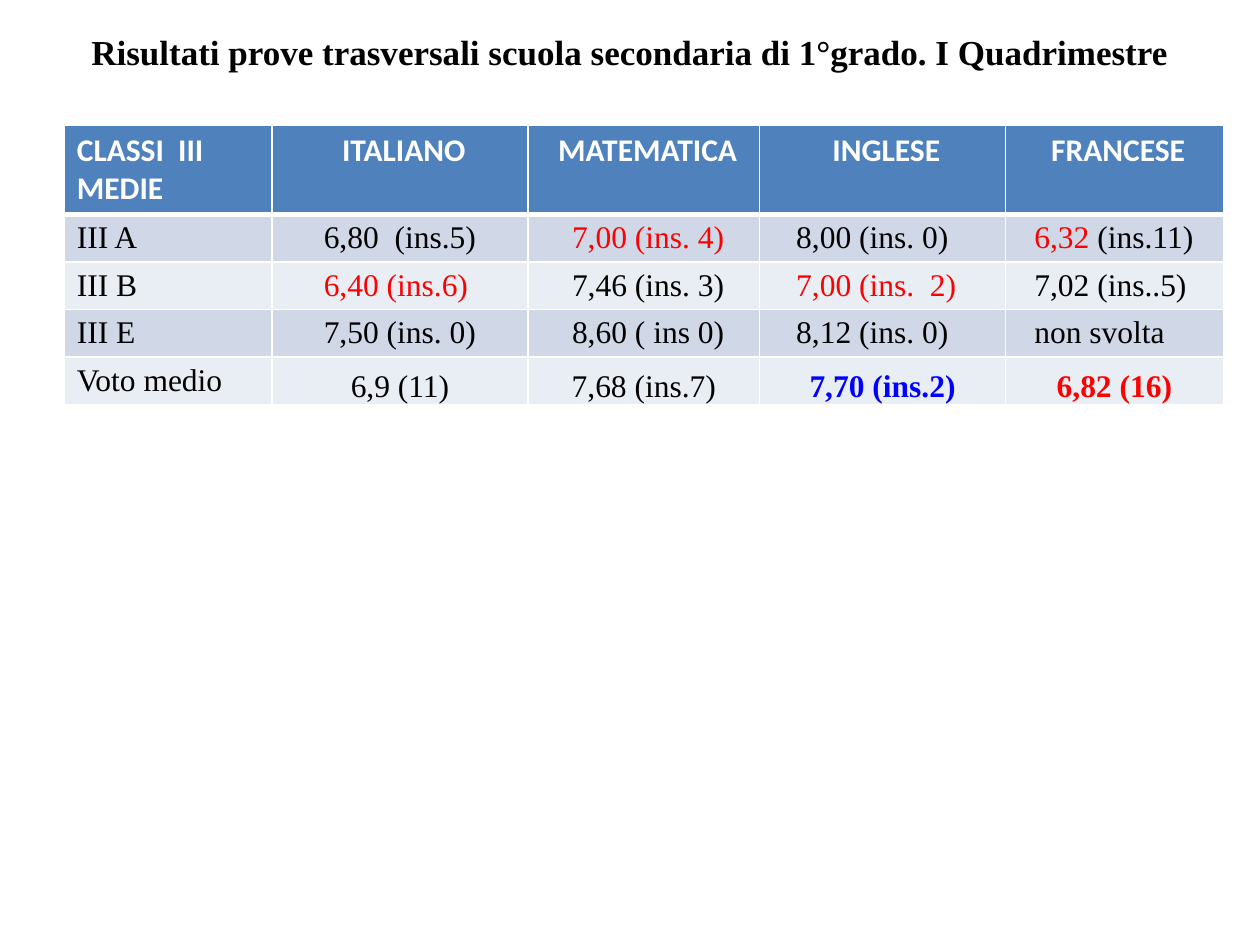
import pptx
import pptx.dml.color
import pptx.enum.text
import pptx.oxml
import pptx.oxml.ns
import pptx.util
from pptx.util import Inches, Pt

COLORS = {"white": "FFFFFF", "black": "000000", "red": "FF0000", "blue": "0000FF",
          "header": "4F81BD", "band_dark": "D0D8E8", "band_light": "E9EDF4"}
SERIF = "Times New Roman"
CENTER = pptx.enum.text.PP_ALIGN.CENTER

COLUMN_WIDTHS = [1.65, 2.03, 1.84, 1.95, 1.73]
SCORE_INDENTS = [0.1, 0.41, 0.35, 0.29, 0.23]
SUBJECTS = ["CLASSI  III MEDIE", "ITALIANO", "MATEMATICA", "INGLESE", "FRANCESE"]
# Each cell is a list of (text, colour) pieces.
CLASS_RESULTS = [
    [[("III A", "black")], [("6,80  (ins.5)", "black")], [("7,00 (ins. 4)", "red")],
     [("8,00 (ins. 0)", "black")], [("6,32 ", "red"), ("(ins.11)", "black")]],
    [[("III B", "black")], [("6,40 (ins.6)", "red")], [("7,46 (ins. 3)", "black")],
     [("7,00 (ins.  2)", "red")], [("7,02 (ins..5)", "black")]],
    [[("III E", "black")], [("7,50 (ins. 0)", "black")], [("8,60 ( ins 0)", "black")],
     [("8,12 (ins. 0)", "black")], [("non svolta", "black")]],
]
AVERAGES = [("Voto medio", "black"), ("6,9 (11)", "black"), ("7,68 (ins.7)", "black"),
            ("7,70 (ins.2)", "blue"), ("6,82 (16)", "red")]


def rgb(name):
    return pptx.dml.color.RGBColor.from_string(COLORS[name])


def format_run(run, color, font=SERIF, size=18, bold=False):
    run.font.name = font
    run.font.size = Pt(size)
    run.font.bold = bold
    run.font.color.rgb = rgb(color)


def set_borders(cell, top=1, bottom=1):
    """Draw white cell borders; widths are in points."""
    properties = cell._tc.get_or_add_tcPr()
    sides = [("L", 1), ("R", 1), ("T", top), ("B", bottom)]
    for position, (side, width) in enumerate(sides):
        properties.insert(position, pptx.oxml.parse_xml(
            f'<a:ln{side} {pptx.oxml.ns.nsdecls("a")} w="{Pt(width)}"><a:solidFill>'
            f'<a:srgbClr val="{COLORS["white"]}"/></a:solidFill></a:ln{side}>'))


def fill_cell(cell, pieces, fill, font=SERIF, bold=False, align=None):
    cell.fill.solid()
    cell.fill.fore_color.rgb = rgb(fill)
    paragraph = cell.text_frame.paragraphs[0]
    paragraph.alignment = align
    for text, color in pieces:
        run = paragraph.add_run()
        run.text = text
        format_run(run, color, font, bold=bold)


def add_title(slide):
    title = slide.shapes.title
    title.left, title.top = Inches(0.5), Inches(-0.5)
    title.width, title.height = Inches(9), Inches(1.81)
    title.text_frame.text = ("Risultati prove trasversali scuola secondaria "
                             "di 1°grado. I Quadrimestre")
    title.text_frame.vertical_anchor = pptx.enum.text.MSO_ANCHOR.MIDDLE
    paragraph = title.text_frame.paragraphs[0]
    paragraph.alignment = CENTER
    format_run(paragraph.runs[0], "black", size=20, bold=True)


def add_header(results):
    for column, subject in enumerate(SUBJECTS):
        cell = results.cell(0, column)
        fill_cell(cell, [(subject, "white")], "header", "Calibri", True,
                  CENTER if column else None)
        if column:
            cell.margin_left = Inches(0.16)
        set_borders(cell, bottom=3)


def add_class_rows(results):
    for row, scores in enumerate(CLASS_RESULTS, start=1):
        for column, pieces in enumerate(scores):
            cell = results.cell(row, column)
            fill_cell(cell, pieces, "band_dark" if row % 2 else "band_light")
            cell.margin_left = Inches(SCORE_INDENTS[column])
            set_borders(cell, top=3 if row == 1 else 1)


def add_averages(results):
    for column, (text, color) in enumerate(AVERAGES):
        cell = results.cell(len(CLASS_RESULTS) + 1, column)
        fill_cell(cell, [(text, color)], "band_light", bold=color != "black",
                  align=CENTER if column else None)
        if column:
            cell.vertical_anchor = pptx.enum.text.MSO_ANCHOR.BOTTOM
            cell.margin_left = cell.margin_right = cell.margin_top = Inches(0.01)
            cell.margin_bottom = 0
        set_borders(cell)


def add_results_table(slide):
    row_heights = [0.7] + [0.37] * (len(CLASS_RESULTS) + 1)
    results = slide.shapes.add_table(
        len(row_heights), len(SUBJECTS), Inches(0.51), Inches(0.99),
        Inches(sum(COLUMN_WIDTHS)), Inches(sum(row_heights))).table
    for column, width in zip(results.columns, COLUMN_WIDTHS):
        column.width = Inches(width)
    for row, height in zip(results.rows, row_heights):
        row.height = Inches(height)
    add_header(results)
    add_class_rows(results)
    add_averages(results)


def main():
    presentation = pptx.Presentation()
    presentation.slide_width, presentation.slide_height = Inches(10), Inches(7.5)
    slide = presentation.slides.add_slide(presentation.slide_layouts[5])
    add_title(slide)
    add_results_table(slide)
    presentation.save("out.pptx")


if __name__ == "__main__":
    main()
